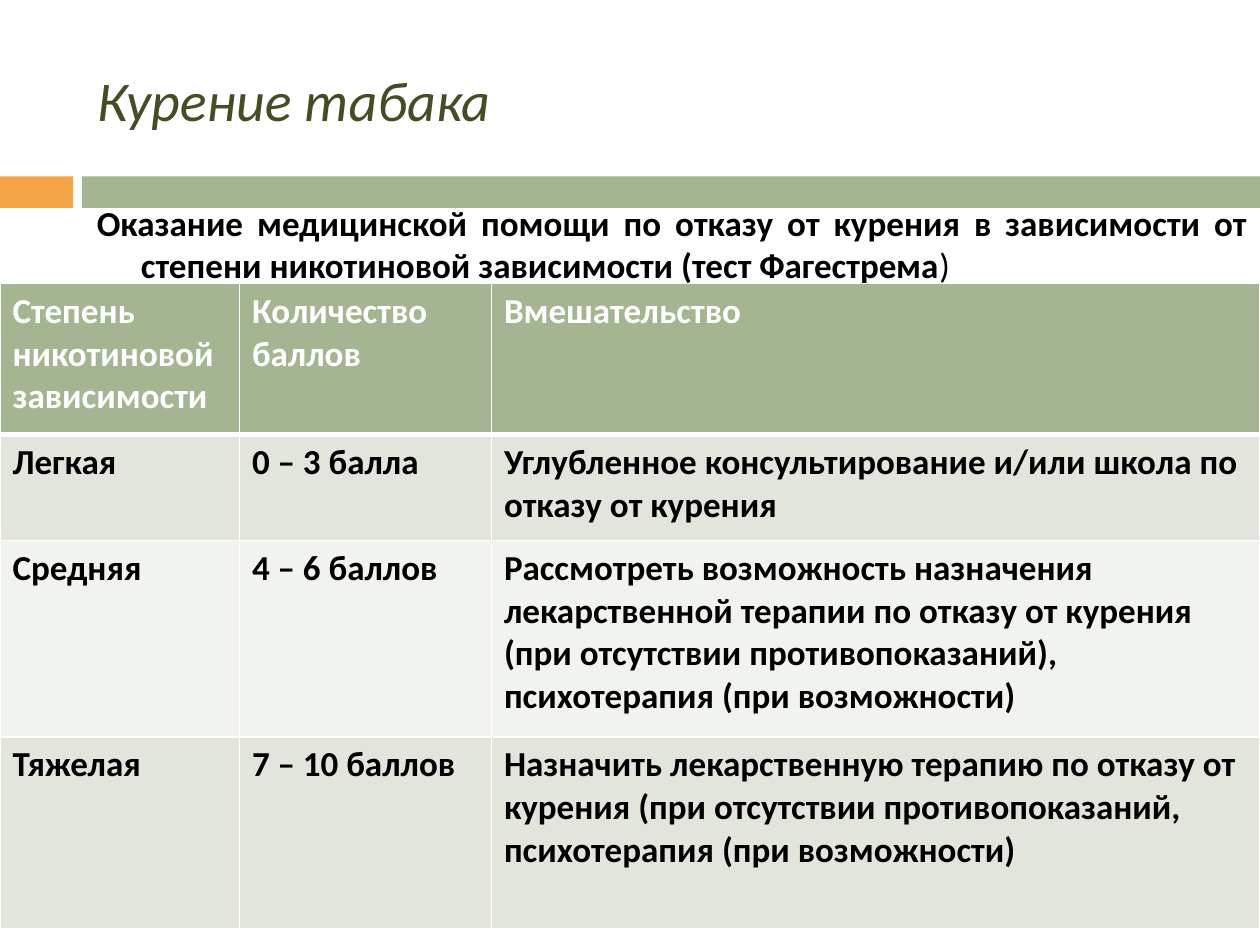
from lxml.etree import SubElement
from pptx import Presentation
from pptx.dml.color import RGBColor
from pptx.enum.shapes import MSO_SHAPE
from pptx.enum.text import MSO_ANCHOR, PP_ALIGN
from pptx.oxml.ns import qn
from pptx.util import Pt

PX = 9144
SLIDE_SIZE = (1000, 750)
FONT = "Calibri"
GREEN, ORANGE, OLIVE = "A5B592", "F3A447", "444D26"
BLACK, WHITE = "000000", "FFFFFF"
BAND_FILLS = ("E1E5DC", "F0F3EE")

TITLE = "Курение табака"
SUBTITLE = (
    "Оказание медицинской помощи по отказу от курения в зависимости от "
    "степени никотиновой зависимости (тест Фагестрема"
)
SUBTITLE_END = ")"
BARS = [((0, 140, 58, 25), ORANGE), ((65, 140, 935, 25), GREEN)]
COLUMN_WIDTHS = (190, 200, 610)
ROW_HEIGHTS = (120, 84, 156, 152)
TREATMENT = [
    ("Степень никотиновой зависимости", "Количество баллов", "Вмешательство"),
    ("Легкая", "0 – 3 балла",
     "Углубленное консультирование и/или школа по отказу от курения"),
    ("Средняя", "4 – 6 баллов",
     "Рассмотреть возможность назначения лекарственной терапии по отказу от курения "
     "(при отсутствии противопоказаний), психотерапия (при возможности)"),
    ("Тяжелая", "7 – 10 баллов",
     "Назначить лекарственную терапию по отказу от курения "
     "(при отсутствии противопоказаний, психотерапия (при возможности)"),
]


def px(*lengths):
    return [length * PX for length in lengths]


def color(value):
    return RGBColor.from_string(value)


def write(paragraph, text, size=20, fill=BLACK, bold=False, italic=False):
    run = paragraph.add_run()
    run.text = text
    font = run.font
    font.name, font.size, font.bold, font.italic = FONT, Pt(size), bold, italic
    font.color.rgb = color(fill)


def add_text_frame(slide, box, anchor):
    frame = slide.shapes.add_textbox(*px(*box)).text_frame
    frame.word_wrap = True
    frame.vertical_anchor = anchor
    return frame


def add_bar(slide, box, fill):
    bar = slide.shapes.add_shape(MSO_SHAPE.RECTANGLE, *px(*box))
    bar.shadow.inherit = False
    bar.fill.solid()
    bar.fill.fore_color.rgb = color(fill)
    bar.line.fill.background()


def set_borders(cell, widths):
    properties = cell._tc.get_or_add_tcPr()
    for position, (side, width) in enumerate(widths.items()):
        border = SubElement(properties, qn(f"a:{side}"), w=str(Pt(width)))
        solid = SubElement(border, qn("a:solidFill"))
        SubElement(solid, qn("a:srgbClr"), val=WHITE)
        properties.insert(position, border)


def add_treatment_table(slide):
    box = (0, 225, sum(COLUMN_WIDTHS), sum(ROW_HEIGHTS))
    table = slide.shapes.add_table(
        len(ROW_HEIGHTS), len(COLUMN_WIDTHS), *px(*box)).table
    for column, width in zip(table.columns, px(*COLUMN_WIDTHS)):
        column.width = width
    for row, height in zip(table.rows, px(*ROW_HEIGHTS)):
        row.height = height
    for row_number, texts in enumerate(TREATMENT):
        header = row_number == 0
        fill = GREEN if header else BAND_FILLS[(row_number - 1) % 2]
        borders = {"lnL": 1, "lnR": 1, "lnT": 3 if row_number == 1 else 1,
                   "lnB": 3 if header else 1}
        for column_number, text in enumerate(texts):
            cell = table.cell(row_number, column_number)
            cell.fill.solid()
            cell.fill.fore_color.rgb = color(fill)
            set_borders(cell, borders)
            write(cell.text_frame.paragraphs[0], text, bold=True,
                  fill=WHITE if header else BLACK)


def main():
    presentation = Presentation()
    presentation.slide_width, presentation.slide_height = px(*SLIDE_SIZE)
    slide = presentation.slides.add_slide(presentation.slide_layouts[6])

    for box, fill in BARS:
        add_bar(slide, box, fill)

    title = add_text_frame(slide, (67, 25, 933, 108), MSO_ANCHOR.MIDDLE)
    write(title.paragraphs[0], TITLE, size=32, fill=OLIVE, italic=True)

    subtitle = add_text_frame(slide, (67, 155, 933, 492), MSO_ANCHOR.TOP)
    paragraph = subtitle.paragraphs[0]
    paragraph.alignment = PP_ALIGN.JUSTIFY
    paragraph.space_before = Pt(7)
    indent = 35 * PX
    properties = paragraph._p.get_or_add_pPr()
    properties.set("marL", str(indent))
    properties.set("indent", str(-indent))
    write(paragraph, SUBTITLE, bold=True)
    write(paragraph, SUBTITLE_END)

    add_treatment_table(slide)
    presentation.save("out.pptx")


if __name__ == "__main__":
    main()
